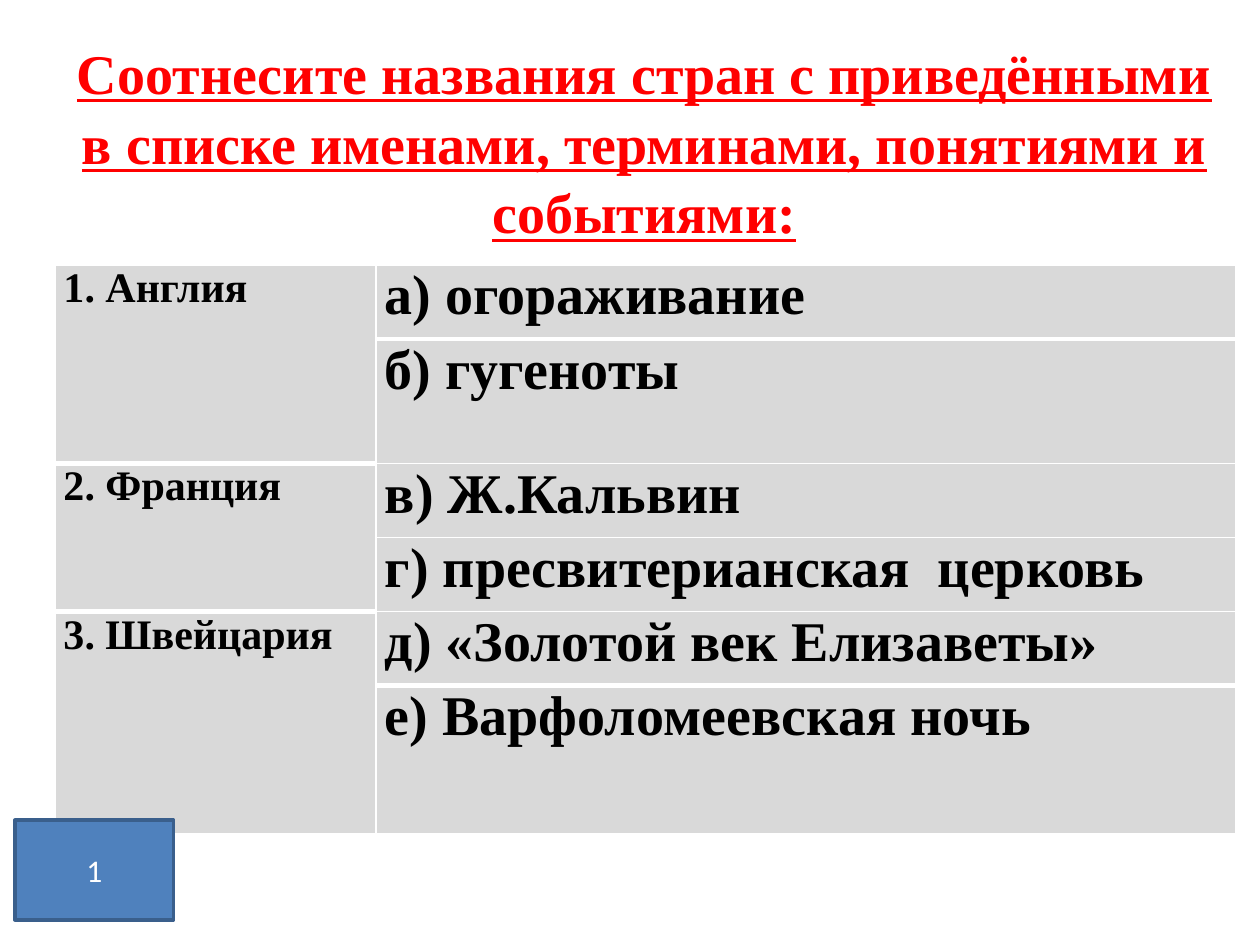
import pptx
import pptx.util
import pptx.dml.color
import pptx.enum.shapes
import pptx.enum.text
import pptx.oxml
import pptx.oxml.ns
import lxml.etree

Pt = pptx.util.Pt
RGBColor = pptx.dml.color.RGBColor
ALIGN = pptx.enum.text.PP_ALIGN
ANCHOR = pptx.enum.text.MSO_ANCHOR

RED = RGBColor(0xFF, 0x00, 0x00)
BLACK = RGBColor(0x00, 0x00, 0x00)
WHITE = RGBColor(0xFF, 0xFF, 0xFF)
GREY = RGBColor(0xD9, 0xD9, 0xD9)
BLUE = RGBColor(0x4F, 0x81, 0xBD)
DARK_BLUE = RGBColor(0x3A, 0x5F, 0x8C)
SERIF = "Times New Roman"

TITLE = ("Соотнесите названия стран с приведёнными в списке именами, "
         "терминами, понятиями и событиями:")
COUNTRIES = ["1. Англия", "2. Франция", "3. Швейцария"]
TERMS = ["а) огораживание", "б) гугеноты", "в) Ж.Кальвин",
         "г) пресвитерианская  церковь", "д) «Золотой век Елизаветы»",
         "е) Варфоломеевская ночь"]
COLUMN_WIDTHS = [183.6, 491]
ROW_HEIGHTS = [42.4, 71, 42.4, 42.4, 42.4, 84.6]
THIN, THICK = 1, 3
THICK_TERM_LINES = (1, 5)
THICK_COUNTRY_LINES = (2, 4)


def set_values(target, values):
    for name, value in values.items():
        setattr(target, name, value)


def write_text(frame, text, alignment, color, **font_values):
    frame.text = text
    paragraph = frame.paragraphs[0]
    paragraph.alignment = alignment
    font = paragraph.runs[0].font
    set_values(font, font_values)
    font.color.rgb = color
    return paragraph


def add_title(slide):
    title = slide.shapes.title
    set_values(title, {"left": Pt(36.7), "top": Pt(31.7),
                       "width": Pt(663), "height": Pt(136)})
    frame = title.text_frame
    set_values(frame, {"word_wrap": True, "vertical_anchor": ANCHOR.MIDDLE,
                       "auto_size": pptx.enum.text.MSO_AUTO_SIZE.NONE,
                       "margin_left": Pt(5), "margin_right": Pt(5),
                       "margin_top": Pt(0), "margin_bottom": Pt(39)})
    paragraph = write_text(frame, TITLE, ALIGN.CENTER, RED, name=SERIF,
                           size=Pt(32), bold=True, underline=True)
    paragraph.line_spacing = 1.04


def set_borders(cell, top, bottom):
    properties = cell._tc.get_or_add_tcPr()
    widths = {"lnL": THIN, "lnR": THIN, "lnT": top, "lnB": bottom}
    for index, (tag, width) in enumerate(widths.items()):
        line = pptx.oxml.parse_xml(
            f'<a:{tag} {pptx.oxml.ns.nsdecls("a")} w="{Pt(width)}">'
            f'<a:solidFill><a:srgbClr val="{WHITE}"/></a:solidFill></a:{tag}>')
        properties.insert(index, line)


def format_cell(cell, row, thick_lines):
    cell.fill.solid()
    cell.fill.fore_color.rgb = GREY
    set_values(cell, {"margin_left": Pt(5), "margin_right": Pt(5),
                      "margin_top": Pt(0), "margin_bottom": Pt(0)})
    top, bottom = (THICK if edge in thick_lines else THIN
                   for edge in (row, row + 1))
    set_borders(cell, top, bottom)


def add_matching_table(slide):
    table = slide.shapes.add_table(
        len(TERMS), 2, Pt(31.3), Pt(151.4),
        Pt(sum(COLUMN_WIDTHS)), Pt(sum(ROW_HEIGHTS))).table
    for column, width in zip(table.columns, COLUMN_WIDTHS):
        column.width = Pt(width)
    for index, term in enumerate(TERMS):
        table.rows[index].height = Pt(ROW_HEIGHTS[index])
        format_cell(table.cell(index, 0), index, THICK_COUNTRY_LINES)
        cell = table.cell(index, 1)
        format_cell(cell, index, THICK_TERM_LINES)
        write_text(cell.text_frame, term, ALIGN.JUSTIFY, BLACK,
                   name=SERIF, size=Pt(32), bold=True)
    for index, country in enumerate(COUNTRIES):
        cell = table.cell(2 * index, 0)
        cell.merge(table.cell(2 * index + 1, 0))
        # A merged cell draws its own bottom edge, at the end of its second row.
        if 2 * index + 2 in THICK_COUNTRY_LINES:
            bottom_line = cell._tc.tcPr.find(pptx.oxml.ns.qn("a:lnB"))
            bottom_line.set("w", str(Pt(THICK)))
        write_text(cell.text_frame, country, ALIGN.JUSTIFY, BLACK,
                   name=SERIF, size=Pt(24), bold=True)


def add_number_box(slide):
    box = slide.shapes.add_shape(pptx.enum.shapes.MSO_SHAPE.RECTANGLE,
                                 Pt(8.6), Pt(468.7), Pt(90.7), Pt(56.9))
    box.shadow.inherit = False
    box.fill.solid()
    box.fill.fore_color.rgb = BLUE
    box.line.color.rgb = DARK_BLUE
    box.line.width = Pt(2)
    box.text_frame.vertical_anchor = ANCHOR.MIDDLE
    write_text(box.text_frame, "1", ALIGN.CENTER, WHITE,
               name="Calibri", size=Pt(18))


def main():
    presentation = pptx.Presentation()
    set_values(presentation, {"slide_width": Pt(720), "slide_height": Pt(540)})
    slide = presentation.slides.add_slide(presentation.slide_layouts[5])
    add_title(slide)
    add_matching_table(slide)
    add_number_box(slide)
    presentation.save("out.pptx")


if __name__ == "__main__":
    main()
